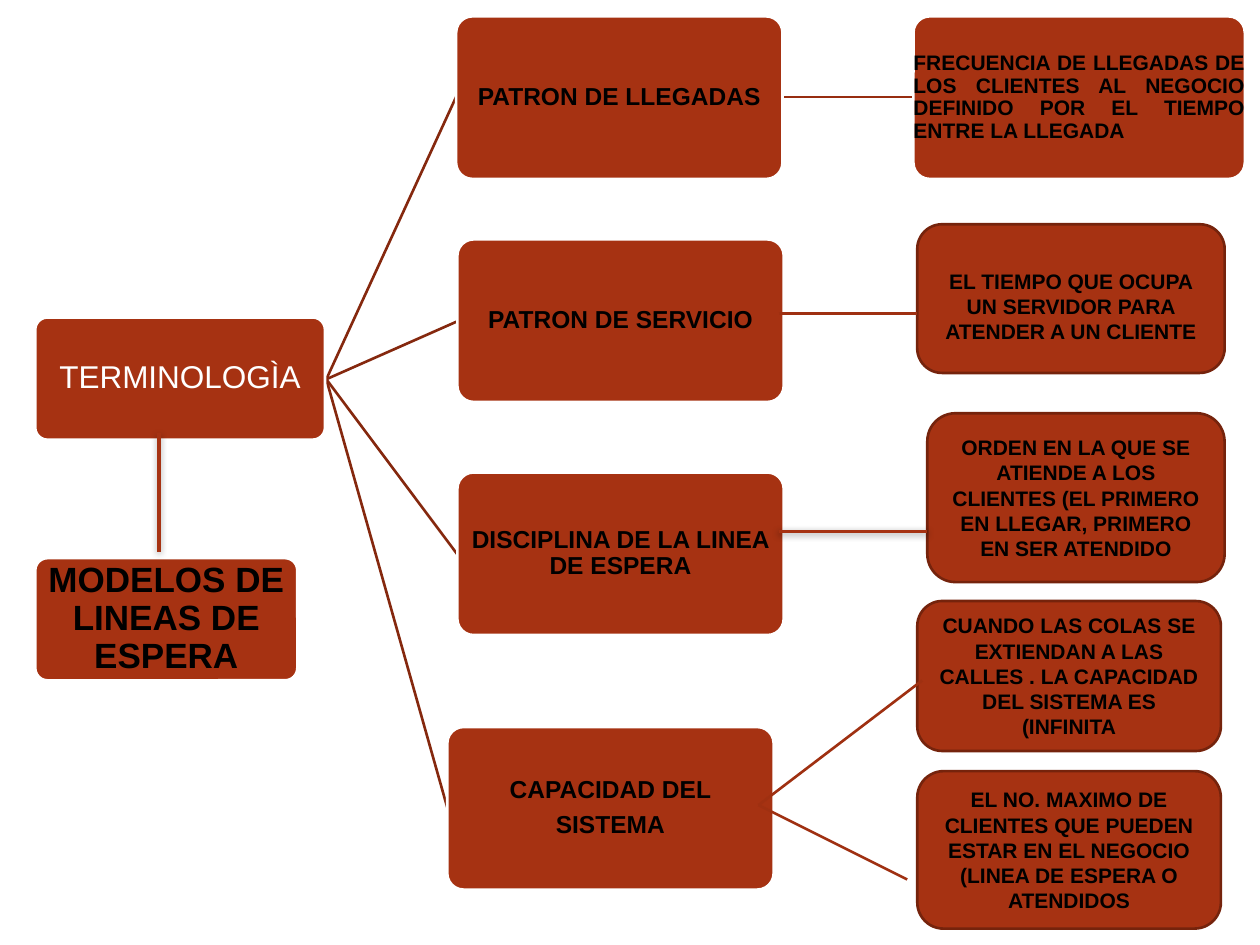
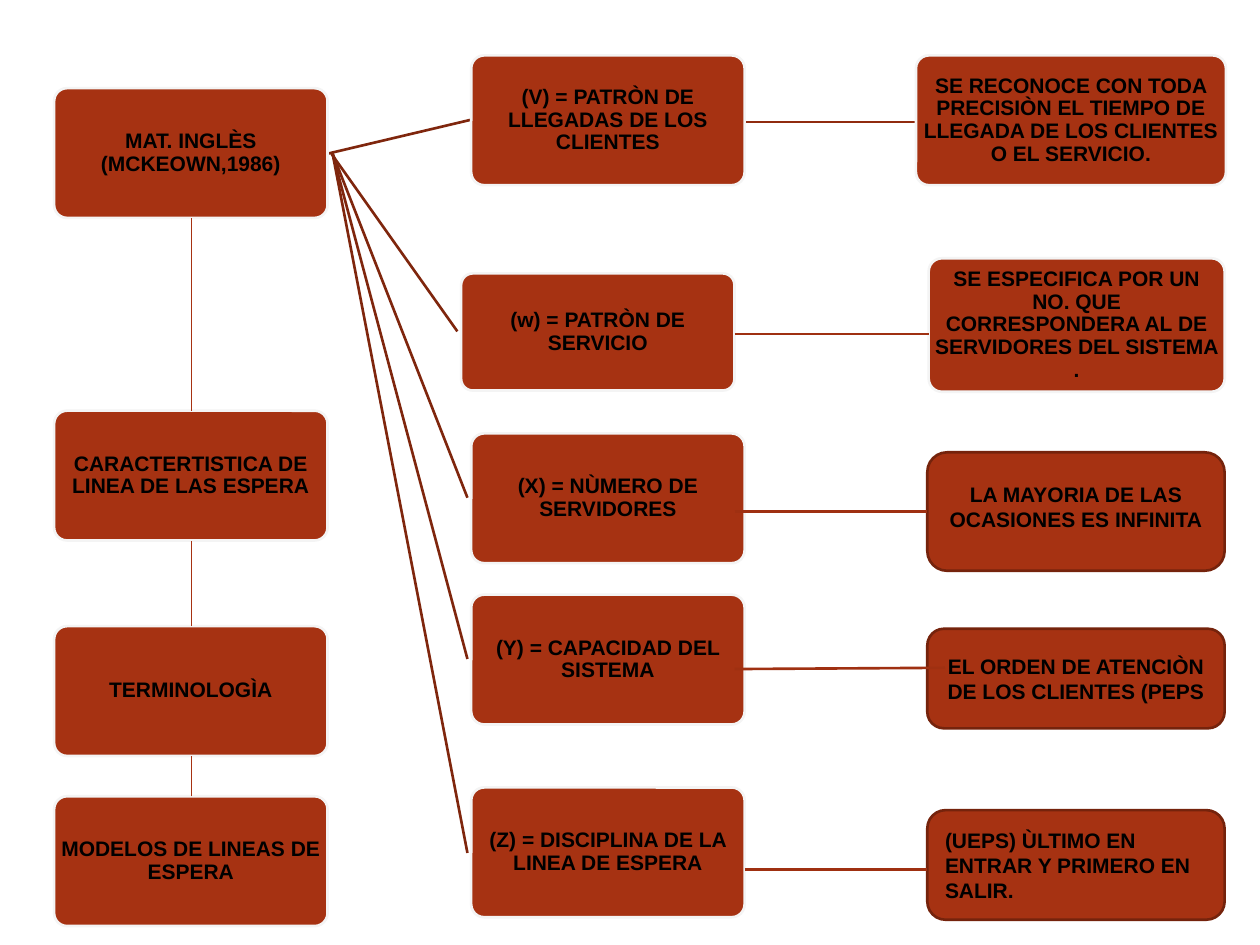
from dataclasses import dataclass

from lxml.etree import SubElement
from pptx import Presentation
from pptx.dml.color import RGBColor
from pptx.enum.shapes import MSO_CONNECTOR as Connector, MSO_SHAPE as Preset
from pptx.enum.text import MSO_ANCHOR as Anchor, PP_ALIGN as Align
from pptx.oxml.ns import qn
from pptx.util import Emu, Pt

PX = 9144  # 100 px to the inch
FONT = "Arial"
COLORS = {
    "rust": "A63212", "outline": "75230C", "white": "FFFFFF", "mist": "F4F4F4",
    "black": "000000", "fan": "85280E", "fan_dark": "7F260D", "row": "972D10",
    "row_dark": "902B0F", "link": "9F3011",
}


@dataclass(frozen=True)
class Style:
    """Look of a box; insets are left/right and top/bottom in px."""
    border: str
    corner: float
    insets: tuple[int, int]
    leading: float
    after: float


DIAGRAM = Style("white", 0.1, (0, 0), 0.9, 0.35)
CHART = Style("mist", 0.1, (1, 1), 0.9, 0.35)
NOTE = Style("outline", 0.16667, (10, 5), 1.0, 0)


@dataclass(frozen=True)
class Box:
    text: str
    left: int
    top: int
    width: int
    height: int
    style: Style
    size: int = 12
    bold: bool = True
    color: str = "black"
    align: Align = Align.CENTER
    shift: int = 0  # moves the text down (or up, if negative)


@dataclass(frozen=True)
class Link:
    start: tuple[int, int]
    end: tuple[int, int]
    color: str = "link"
    weight: float = 1.5
    shadow: bool = False


def px(length: int) -> Emu:
    return Emu(length * PX)


def rgb(name: str) -> RGBColor:
    return RGBColor.from_string(COLORS[name])


def write_text(shape, text: str, *, size: int = 12, bold: bool = True, color: str = "black",
               align: Align = Align.CENTER, insets: tuple[int, int] = (0, 0), shift: int = 0,
               leading: float = 1.0, after: float = 0) -> None:
    frame = shape.text_frame
    frame.word_wrap = True
    frame.vertical_anchor = Anchor.MIDDLE
    side, edge = insets
    frame.margin_left = frame.margin_right = px(side)
    frame.margin_top = px(edge + 2 * max(shift, 0))
    frame.margin_bottom = px(edge + 2 * max(-shift, 0))
    for index, line in enumerate(text.split("\n")):
        para = frame.paragraphs[0] if index == 0 else frame.add_paragraph()
        para.alignment = align
        para.line_spacing = leading
        para.space_after = Pt(size * after)
        span = para.add_run()
        span.text = line
        span.font.name = FONT
        span.font.size = Pt(size)
        span.font.bold = bold
        span.font.color.rgb = rgb(color)


def draw_box(page, box: Box) -> None:
    style = box.style
    shape = page.shapes.add_shape(Preset.ROUNDED_RECTANGLE, px(box.left), px(box.top),
                                  px(box.width), px(box.height))
    shape.adjustments[0] = style.corner
    shape.shadow.inherit = False
    shape.fill.solid()
    shape.fill.fore_color.rgb = rgb("rust")
    shape.line.color.rgb = rgb(style.border)
    shape.line.width = Pt(1.5)
    if box.text:
        write_text(shape, box.text, size=box.size, bold=box.bold, color=box.color,
                   align=box.align, insets=style.insets, shift=box.shift,
                   leading=style.leading, after=style.after)


def draw_link(page, link: Link) -> None:
    line = page.shapes.add_connector(Connector.STRAIGHT, *map(px, link.start + link.end))
    line.line.color.rgb = rgb(link.color)
    line.line.width = Pt(link.weight)
    effects = SubElement(line._element.spPr, qn("a:effectLst"))
    if link.shadow:
        shadow = SubElement(effects, qn("a:outerShdw"), blurRad=str(Pt(4)), dist=str(Pt(1)),
                            dir="5400000", rotWithShape="0")
        tint = SubElement(shadow, qn("a:srgbClr"), val=COLORS["black"])
        SubElement(tint, qn("a:alpha"), val="37000")


def draw_page(deck, under: list[Link], boxes: list[Box], over: list[Link]):
    """Draw links beneath the boxes, the boxes, then links above them."""
    page = deck.slides.add_slide(deck.slide_layouts[6])
    for link in under:
        draw_link(page, link)
    for box in boxes:
        draw_box(page, box)
    for link in over:
        draw_link(page, link)
    return page


def build_terminology(deck) -> None:
    root = (259, 301)
    fan_ends = [(362, 77), (363, 255), (363, 440), (355, 641)]
    under = [Link(root, end, "fan") for end in fan_ends]
    under.append(Link((621, 77), (725, 77), "row"))
    topics = [
        ("PATRON DE LLEGADAS", 362, 13),
        ("PATRON DE SERVICIO", 363, 190),
        ("DISCIPLINA DE LA LINEA DE ESPERA", 363, 375),
        ("CAPACIDAD DEL\nSISTEMA", 355, 577),
    ]
    boxes = [
        Box("TERMINOLOGÌA", 28, 252, 230, 97, DIAGRAM, size=18, bold=False, color="white"),
        *(Box(text, left, top, 259, 129, DIAGRAM, size=14) for text, left, top in topics),
        Box("", 725, 13, 263, 129, DIAGRAM),
        Box("MODELOS DE LINEAS DE ESPERA", 28, 443, 208, 97, DIAGRAM, size=20),
        Box("EL TIEMPO QUE OCUPA UN SERVIDOR PARA ATENDER A UN CLIENTE",
            728, 178, 244, 118, NOTE, shift=6),
        Box("ORDEN EN LA QUE SE ATIENDE A LOS CLIENTES (EL PRIMERO EN LLEGAR, PRIMERO "
            "EN SER ATENDIDO", 736, 328, 236, 134, NOTE),
        Box("CUANDO LAS COLAS SE EXTIENDAN A LAS CALLES . LA CAPACIDAD DEL SISTEMA ES "
            "(INFINITA", 728, 477, 241, 119, NOTE),
        Box("EL NO. MAXIMO DE CLIENTES QUE PUEDEN ESTAR EN EL NEGOCIO (LINEA DE ESPERA O "
            "ATENDIDOS", 728, 612, 241, 125, NOTE),
    ]
    over = [
        Link((126, 344), (126, 438), "rust", 2, shadow=True),
        Link((736, 422), (618, 422), "rust", 2, shadow=True),
        Link((618, 249), (728, 249)),
        Link((602, 639), (732, 540)),
        Link((602, 639), (720, 698)),
    ]
    page = draw_page(deck, under, boxes, over)
    # This text fills the full width of its box, past the rounded corners' inset.
    label = page.shapes.add_textbox(px(725), px(13), px(263), px(129))
    write_text(label, "FRECUENCIA DE LLEGADAS DE LOS CLIENTES AL NEGOCIO DEFINIDO POR EL TIEMPO "
               "ENTRE LA LLEGADA", align=Align.JUSTIFY,
               leading=DIAGRAM.leading, after=DIAGRAM.after)


def build_notation(deck) -> None:
    fan = [((260, 122), (374, 95)), ((263, 122), (363, 263)),
           *(((264, 122), (371, bottom)) for bottom in (395, 523, 677))]
    under = [Link(start, end, "fan_dark") for start, end in fan]
    under.append(Link((591, 97), (727, 97), "row_dark"))
    width, height = 217, 103
    stages = [
        ("MAT. INGLÈS (MCKEOWN,1986)", 70),
        ("CARACTERTISTICA DE LINEA DE LAS ESPERA", 326),
        ("TERMINOLOGÌA", 497),
        ("MODELOS DE LINEAS DE ESPERA", 632),
    ]
    symbols = [
        ("(V) = PATRÒN DE LLEGADAS DE LOS CLIENTES", 44),
        ("(X) = NÙMERO DE SERVIDORES", 344),
        ("(Y) = CAPACIDAD DEL SISTEMA", 472),
        ("(Z) = DISCIPLINA DE LA LINEA DE ESPERA", 625),
    ]
    boxes = [
        *(Box(text, 43, top, width, height, CHART) for text, top in stages),
        *(Box(text, 374, top, width, height, CHART) for text, top in symbols),
        Box("(w) = PATRÒN DE SERVICIO", 366, 217, width, 93, CHART),
        Box("SE RECONOCE CON TODA PRECISIÒN EL TIEMPO DE LLEGADA DE LOS CLIENTES O EL "
            "SERVICIO.", 727, 44, 246, height, CHART),
        Box("SE ESPECIFICA POR UN NO. QUE CORRESPONDERA AL DE SERVIDORES DEL SISTEMA .",
            737, 205, 235, 106, CHART),
        Box("LA MAYORIA DE LAS OCASIONES ES INFINITA", 736, 359, 236, 94, NOTE, shift=-4),
        Box("EL ORDEN DE ATENCIÒN DE LOS CLIENTES (PEPS", 736, 499, 236, 79, NOTE),
        Box("(UEPS) ÙLTIMO EN ENTRAR Y PRIMERO EN SALIR.", 736, 643, 236, 87, NOTE,
            align=Align.LEFT),
    ]
    over = [
        Link((583, 406), (736, 406)),
        Link((583, 531), (750, 530)),
        Link((591, 690), (736, 690)),
        Link((583, 265), (737, 265)),
    ]
    tops = [top for _, top in stages]
    over += [Link((152, lower), (152, upper + height), "rust", 0.75)
             for upper, lower in zip(tops, tops[1:])]
    draw_page(deck, under, boxes, over)


def main() -> None:
    deck = Presentation()
    deck.slide_width, deck.slide_height = px(1000), px(750)
    build_terminology(deck)
    build_notation(deck)
    deck.save("out.pptx")


if __name__ == "__main__":
    main()
